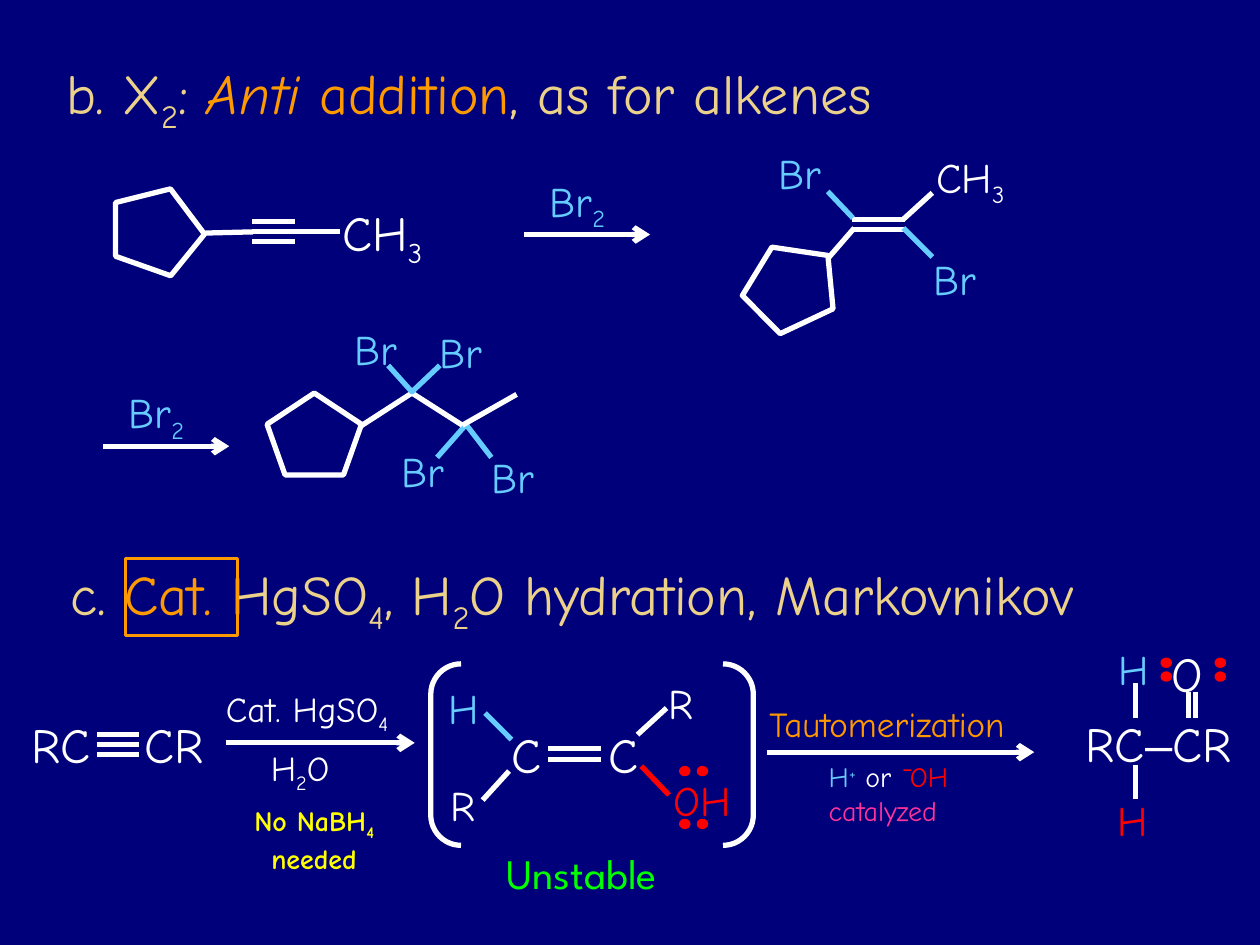
from dataclasses import dataclass
from itertools import pairwise, product

from lxml.etree import SubElement
from pptx import Presentation
from pptx.dml.color import RGBColor
from pptx.enum.shapes import MSO_CONNECTOR, MSO_SHAPE as SHAPE
from pptx.enum.text import MSO_ANCHOR, MSO_AUTO_SIZE, PP_ALIGN as ALIGN
from pptx.oxml.ns import qn
from pptx.util import Pt


@dataclass(frozen=True)
class Theme:
    background: str = "00007A"
    white: str = "FFFFFF"
    blue: str = "66CCFF"
    sand: str = "EBD189"
    orange: str = "FF9900"
    red: str = "FF0000"
    pink: str = "FF3399"
    yellow: str = "FFFF00"
    green: str = "00FF00"
    font: str = "Comic Neue"
    accent_font: str = "League Spartan"
    dash_font: str = "Arial"
    heading: int = 32
    large: int = 28
    atom: int = 24
    reagent: int = 20
    note: int = 16
    stroke: float = 3
    frame_stroke: float = 1.75


THEME = Theme()


def fill_text(frame, parts, size, align=ALIGN.LEFT, bold=False):
    """Write (text, colour[, font[, italic]]) parts; _x_ lowers x, or raises a plus."""
    frame.word_wrap = True
    frame.auto_size = MSO_AUTO_SIZE.NONE
    frame.vertical_anchor = MSO_ANCHOR.TOP
    para = frame.paragraphs[0]
    para.alignment = align
    for text, color, *style in parts:
        for index, piece in enumerate(text.split("_")):
            if not piece:
                continue
            span = para.add_run()
            span.text = piece
            span.font.name = style[0] if style else THEME.font
            span.font.size = Pt(size)
            span.font.bold = bold
            span.font.italic = len(style) > 1 and style[1]
            span.font.color.rgb = RGBColor.from_string(color)
            if index % 2:
                shift = "30000" if piece == "+" else "-25000"
                span._r.get_or_add_rPr().set("baseline", shift)


class Region:
    """Draws parts at points measured from the region's left top corner."""

    def __init__(self, page, left, top):
        self.page, self.left, self.top = page, left, top

    def at(self, x, y):
        return Pt(self.left + x), Pt(self.top + y)

    def label(self, x, y, width, height, parts, size=THEME.atom, **style):
        box = self.page.shapes.add_textbox(*self.at(x, y), Pt(width), Pt(height))
        fill_text(box.text_frame, parts, size, **style)

    def atom(self, x, y, text, color=THEME.white, size=THEME.atom, width=58):
        self.label(x, y, width, size * 1.5, [(text, color)], size)

    def bond(self, start, end, color=THEME.white):
        line = self.page.shapes.add_connector(
            MSO_CONNECTOR.STRAIGHT, *self.at(*start), *self.at(*end))
        line.line.color.rgb = RGBColor.from_string(color)
        line.line.width = Pt(THEME.stroke)
        SubElement(line._element.spPr, qn("a:effectLst"))
        return line

    def parallel_bonds(self, x, y, length, count, gap=5.75):
        for index in range(count):
            level = y + index * gap
            self.bond((x, level), (x + length, level))

    def arrow(self, length):
        line = self.bond((0, 0), (length, 0))
        SubElement(line.line._get_or_add_ln(), qn("a:tailEnd"), type="arrow")

    def outline(self, shape, color=THEME.white, width=THEME.stroke):
        shape.shadow.inherit = False
        shape.fill.background()
        shape.line.color.rgb = RGBColor.from_string(color)
        shape.line.width = Pt(width)

    def shape(self, kind, x, y, width, height):
        return self.page.shapes.add_shape(
            kind, *self.at(x, y), Pt(width), Pt(height))

    def ring(self, x, y, rotation=0):
        pentagon = self.shape(SHAPE.REGULAR_PENTAGON, x, y, 54, 46.8)
        pentagon.rotation = rotation
        self.outline(pentagon)

    def bromine_fork(self, first, apex, last):
        builder = self.page.shapes.build_freeform(*self.at(*first), scale=1.0)
        builder.add_line_segments([self.at(*apex), self.at(*last)], close=False)
        self.outline(builder.convert_to_shape(), THEME.blue)

    def lone_pairs(self, columns, rows):
        for x, y in product(columns, rows):
            dot = self.shape(SHAPE.OVAL, x, y, 3.6, 2.9)
            self.outline(dot, THEME.red)
            dot.fill.solid()
            dot.fill.fore_color.rgb = RGBColor.from_string(THEME.blue)


def addition_title(page):
    title = page.shapes.title
    title.left, title.top, title.width, title.height = Pt(31), Pt(30), Pt(555), Pt(46)
    fill_text(title.text_frame, [
        ("b. X_2_: ", THEME.sand), ("Anti", THEME.orange, THEME.font, True),
        (" addition", THEME.orange), (", as for alkenes", THEME.sand)], THEME.heading)


def cyclopentyl_alkyne(region):
    region.parallel_bonds(84, 26.7, 24.4, 3)
    region.bond((108, 32.5), (134.4, 32.5))
    region.bond((57.4, 33.2), (84.7, 32.5))
    region.atom(128.6, 12.3, "CH_3_", size=THEME.large, width=68)
    region.ring(2.6, 6.6, 19.5)


def bromine_step(region):
    region.arrow(72)
    region.atom(7.5, -37.5, "Br_2_", THEME.blue, width=72)


def dibromoalkene(region):
    region.parallel_bonds(66.7, 45.3, 30.3, 2)
    region.bond((53, 29.4), (67.4, 44.6), THEME.blue)
    region.bond((53.8, 66.9), (68.2, 50.3))
    region.bond((112.8, 30.2), (96.2, 45.3))
    region.bond((112.8, 66.9), (96.2, 50.3), THEME.blue)
    region.atom(17.8, 0.6, "Br", THEME.blue)
    region.atom(107.8, 2.8, "CH_3_", width=64)
    region.atom(106.3, 61.1, "Br", THEME.blue)
    region.ring(4, 59, -25.1)


def tetrabromide(region):
    region.bromine_fork((130.8, 81.4), (116.4, 62.6), (99.8, 81.4))
    region.ring(2.6, 44.6)
    chain = [(55.2, 64.1), (85.4, 44.6), (114.2, 63), (145.2, 45.4)]
    for start, end in pairwise(chain):
        region.bond(start, end)
    region.bromine_fork((71.8, 28.8), (85.4, 43.9), (101.3, 28.8))
    for x, y in [(72.5, 71.3), (123.6, 74.2), (45.8, 1.4), (94.1, 2.9)]:
        region.atom(x, y, "Br", THEME.blue)


def hydration_heading(region):
    region.label(0, 0, 664, 46, [
        ("c. ", THEME.sand), ("Cat. ", THEME.orange),
        ("HgSO_4_, H_2_O hydration, Markovnikov", THEME.sand)], THEME.heading)
    frame = region.shape(SHAPE.RECTANGLE, 39, 3, 64, 44)
    region.outline(frame, THEME.orange, THEME.frame_stroke)


def internal_alkyne(region):
    region.parallel_bonds(45.4, 19.8, 23.8, 3)
    region.atom(0.8, 4.6, "RC", size=THEME.large)
    region.atom(65.6, 4.6, "CR", size=THEME.large)


def hydration_step(region):
    region.arrow(108)
    region.atom(-7, -35, "Cat. HgSO_4_", size=THEME.reagent, width=122)
    region.atom(18.7, -1.5, "H_2_O", size=THEME.reagent, width=73)
    region.label(-5, 31, 111, 46, [("No NaBH_4_ needed", THEME.yellow)],
                 THEME.note, align=ALIGN.CENTER, bold=True)


def enol(region):
    brackets = region.shape(SHAPE.DOUBLE_BRACKET, 6.2, 9.4, 184.3, 103.7)
    brackets.adjustments[0] = 0.167
    region.outline(brackets)
    region.parallel_bonds(73.2, 57.7, 30.2, 2, gap=6.5)
    region.atom(45, 40.4, "C", size=THEME.large, width=40)
    region.atom(100.6, 40.4, "C", size=THEME.large, width=40)
    region.bond((37.2, 37.5), (52.3, 52.6), THEME.blue)
    region.bond((35.8, 87.2), (50.9, 70.6))
    region.bond((140.9, 34.6), (124.3, 49.8))
    region.bond((142.3, 84.3), (126.5, 67.8), THEME.red)
    region.atom(9, 16.6, "H", THEME.blue, width=34)
    region.atom(10.6, 72, "R", width=34)
    region.atom(135, 13.8, "R", width=34)
    region.atom(138, 69.2, "OH", THEME.red)
    region.lone_pairs((149.5, 159.6), (69.2, 99.4))
    region.label(38, 111, 109, 36, [("Unstable", THEME.green, THEME.accent_font)],
                 align=ALIGN.CENTER)


def tautomerization_step(region):
    region.arrow(152.5)
    region.atom(-6, -32, "Tautomerization", THEME.orange, THEME.reagent, 181)
    region.label(28, 0.7, 96.5, 46, [
        ("H_+_", THEME.blue), (" or ", THEME.white), (" OH ", THEME.red),
        ("catalyzed", THEME.pink)], THEME.note)
    region.atom(69.8, -5, "-", THEME.red, THEME.note, 40)


def ketone(region):
    for x, top, bottom in [(69, 35.3, 50.4), (73.3, 35.3, 50.4),
                           (38.7, 30.2, 50.4), (38.7, 77, 96.5)]:
        region.bond((x, top), (x, bottom))
    region.atom(52.4, 4.3, "O", size=THEME.large, width=25.2)
    region.lone_pairs((54.6, 85.5), (17.3, 25.2))
    region.label(3.4, 44, 123, 41, [
        ("RC", THEME.white), ("‒", THEME.white, THEME.dash_font),
        ("CR", THEME.white)], THEME.large)
    region.atom(22.2, 4.3, "H", THEME.blue, width=33)
    region.atom(21.4, 90.7, "H", THEME.red, width=33)


def main():
    deck = Presentation()
    deck.slide_width, deck.slide_height = Pt(720), Pt(540)
    page = deck.slides.add_slide(deck.slide_layouts[5])
    page.background.fill.solid()
    page.background.fill.fore_color.rgb = RGBColor.from_string(THEME.background)
    addition_title(page)
    for draw, left, top in [
            (cyclopentyl_alkyne, 60, 100), (bromine_step, 299.5, 134),
            (dibromoalkene, 420, 80), (bromine_step, 59, 255),
            (tetrabromide, 150, 180), (hydration_heading, 33, 316),
            (internal_alkyne, 10, 400), (hydration_step, 129, 424.5),
            (enol, 240, 370), (tautomerization_step, 438.5, 429.8),
            (ketone, 610, 360)]:
        draw(Region(page, left, top))
    deck.save("out.pptx")


if __name__ == "__main__":
    main()
